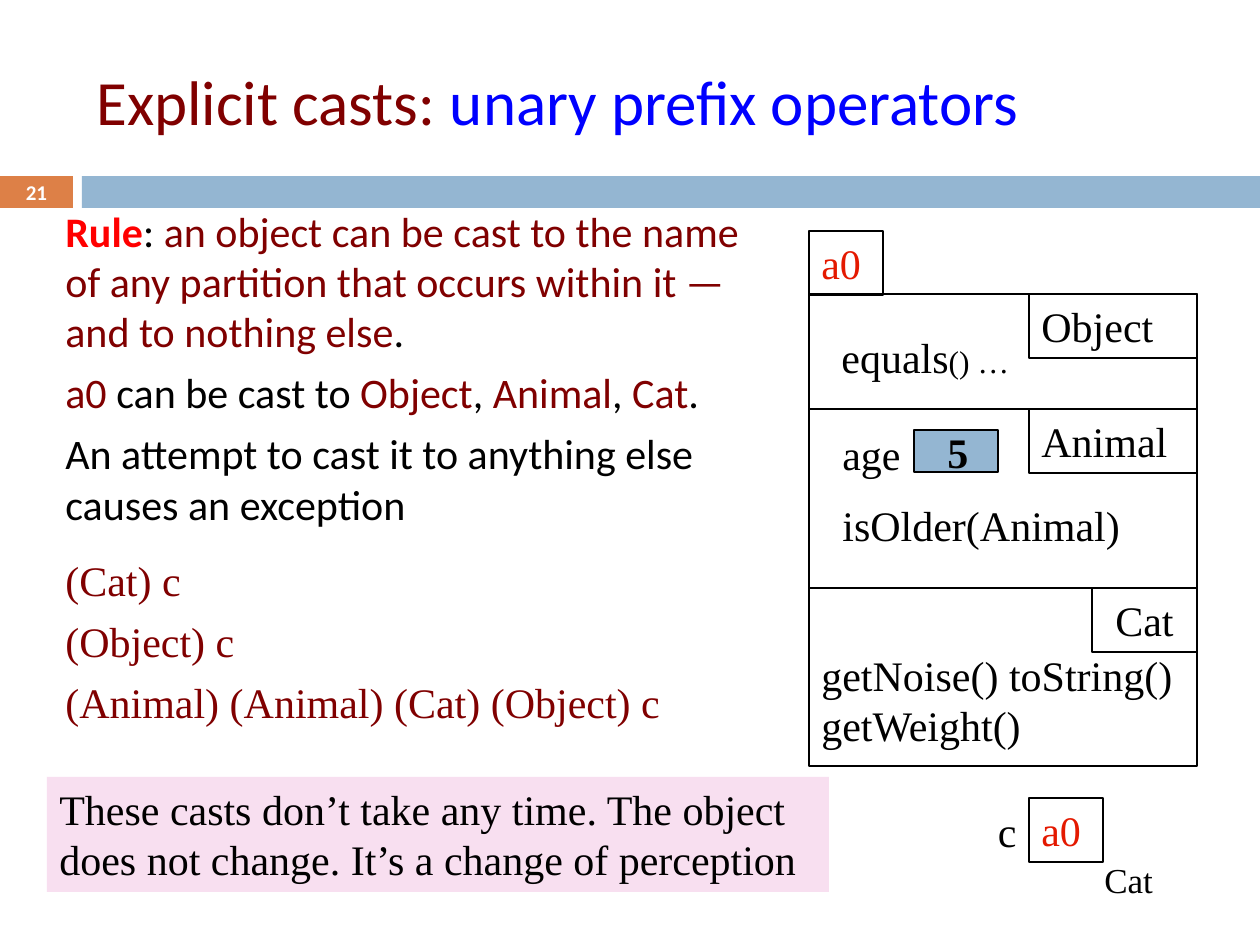
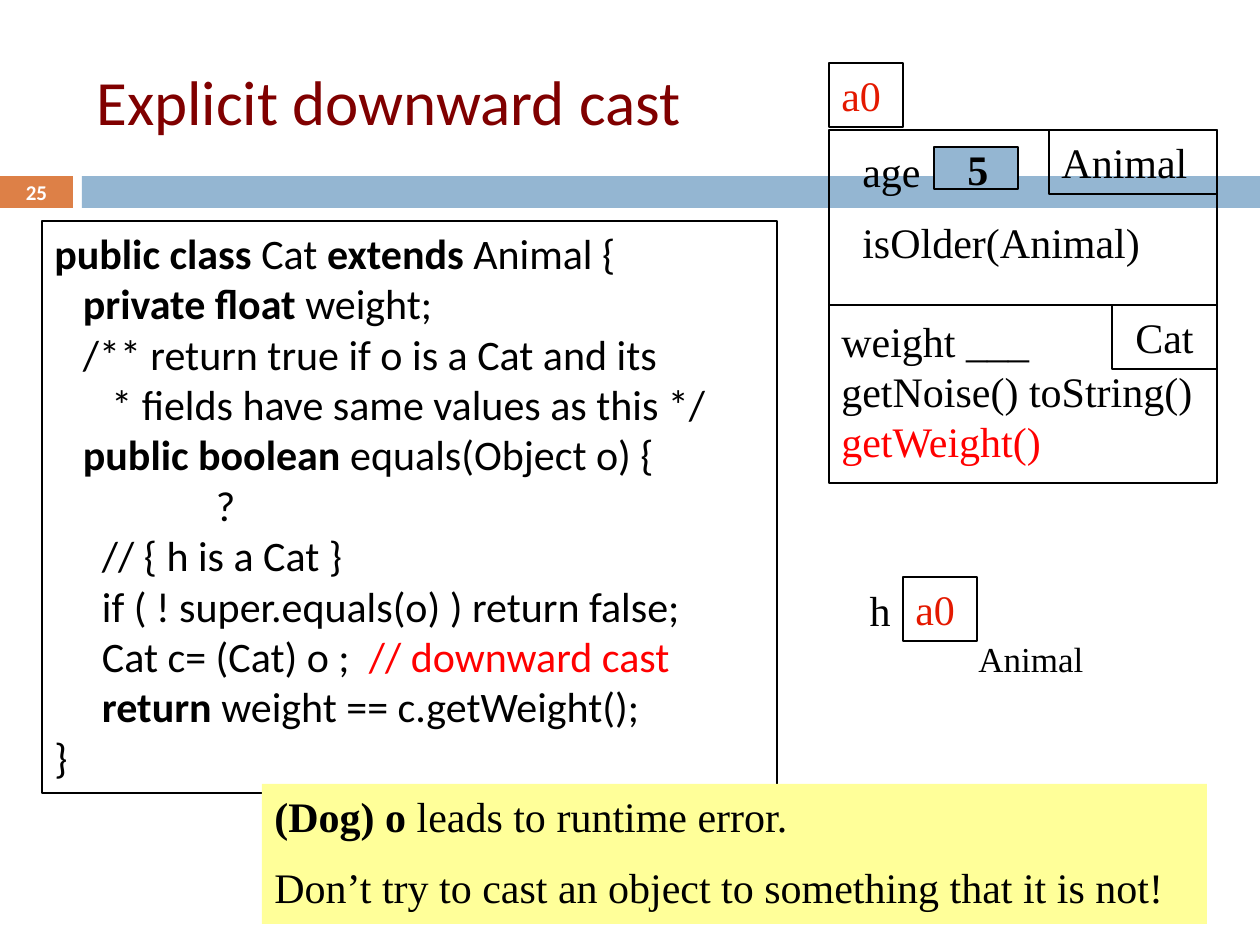
import itertools

import pptx
import pptx.dml.color
import pptx.enum.shapes
import pptx.enum.text
import pptx.oxml.xmlchemy
import pptx.util

RGBColor = pptx.dml.color.RGBColor
ALIGN = pptx.enum.text.PP_ALIGN
ANCHOR = pptx.enum.text.MSO_ANCHOR

# Scale and shared formats
PX_PER_INCH = 126
SLIDE_W, SLIDE_H = 1260, 945
SANS, SERIF = "Calibri", "Times New Roman"
SPACE_WIDTH = 9.5  # one 24 pt Calibri space

BLACK = RGBColor(0x00, 0x00, 0x00)
WHITE = RGBColor(0xFF, 0xFF, 0xFF)
MAROON = RGBColor(0x80, 0x00, 0x00)
BLUE = RGBColor(0x00, 0x00, 0xFF)
RED = RGBColor(0xFF, 0x00, 0x00)
POINTER_RED = RGBColor(0xE4, 0x19, 0x00)
ORANGE = RGBColor(0xDD, 0x80, 0x47)
STEEL = RGBColor(0x94, 0xB6, 0xD2)
PINK = RGBColor(0xF8, 0xDF, 0xF0)
YELLOW = RGBColor(0xFF, 0xFF, 0x99)

BOLD = {"bold": True}


def px(length):
    return pptx.util.Emu(round(length * 914400 / PX_PER_INCH))


def write_text(shape, paragraphs, size=24, font=SERIF, color=BLACK, bold=False,
               align=ALIGN.LEFT, anchor=ANCHOR.TOP, gap=0, wrap=True, indents=()):
    """Fill a shape; a paragraph is a string or a list of (text, format) runs."""
    frame = shape.text_frame
    frame.word_wrap = wrap
    frame.vertical_anchor = anchor
    for number, (runs, indent) in enumerate(
            itertools.zip_longest(paragraphs, indents, fillvalue=0)):
        paragraph = frame.add_paragraph() if number else frame.paragraphs[0]
        paragraph.alignment = align
        paragraph.space_before = pptx.util.Pt(gap if number else 0)
        if indent:
            paragraph._p.get_or_add_pPr().set("marL", str(px(indent)))
        for text, changes in [(runs, {})] if isinstance(runs, str) else runs:
            run = paragraph.add_run()
            run.text = text
            formats = {"name": font, "size": pptx.util.Pt(size),
                       "bold": bold, "color": color} | changes
            run.font.fill.solid()
            run.font.fill.fore_color.rgb = formats.pop("color")
            for attribute, value in formats.items():
                setattr(run.font, attribute, value)


def add_text(slide, at, paragraphs, **formats):
    write_text(slide.shapes.add_textbox(*map(px, at)), paragraphs, **formats)


def add_box(slide, at, paragraphs=(), fill=None, line=None, **formats):
    box = slide.shapes.add_shape(
        pptx.enum.shapes.MSO_SHAPE.RECTANGLE, *map(px, at))
    box.shadow.inherit = False
    if fill is None:
        box.fill.background()
    else:
        box.fill.solid()
        box.fill.fore_color.rgb = fill
    if line is None:
        box.line.fill.background()
    else:
        box.line.color.rgb = line
        box.line.width = pptx.util.Pt(0.75)
    write_text(box, paragraphs, **formats)


def add_divider(slide, left, right, y):
    divider = slide.shapes.add_connector(
        pptx.enum.shapes.MSO_CONNECTOR.STRAIGHT, px(left), px(y), px(right), px(y))
    divider.line.color.rgb = BLACK
    divider.line.width = pptx.util.Pt(0.75)
    divider._element.spPr.append(
        pptx.oxml.xmlchemy.OxmlElement("a:effectLst"))


def add_lecture_slide(deck, number, title):
    """Blank slide with the band, the page number and the title."""
    slide = deck.slides.add_slide(deck.slide_layouts[6])
    add_box(slide, (0, 176, 73, 32), fill=ORANGE)
    add_box(slide, (82, 176, 1178, 32), fill=STEEL)
    add_text(slide, (84, 32, 1124, 136), [title], size=36, font=SANS,
             color=MAROON, anchor=ANCHOR.MIDDLE)
    add_text(slide, (0, 175, 73, 34), [number], size=12, font=SANS, color=WHITE,
             bold=True, align=ALIGN.CENTER, anchor=ANCHOR.MIDDLE)
    return slide


def add_pointer(slide, left, top):
    add_box(slide, (left, top, 74, 64), ["a0"], line=BLACK, color=POINTER_RED)


def add_variable(slide, left, top, name, type_name):
    """A variable: its name, its pointer value and its type."""
    add_text(slide, (left - 53, top + 1, 53, 63), [name], align=ALIGN.RIGHT)
    add_pointer(slide, left, top)
    add_text(slide, (left + 63, top + 54, 136, 55), [type_name], size=20)


def add_partition_tab(slide, right, top, width, name, align=ALIGN.LEFT):
    add_box(slide, (right - width, top, width, 64), [name], line=BLACK, align=align)


def add_cat_object(slide, left, pointer_top, top, animal_top, methods, methods_top):
    """Object a0 with its Animal and Cat partitions."""
    width = 388
    right = left + width
    cat_top = animal_top + 179
    add_box(slide, (left, top, width, animal_top + 357 - top), line=BLACK)
    add_pointer(slide, left, pointer_top)

    # Animal partition
    add_partition_tab(slide, right, max(top, animal_top), 168, "Animal")
    add_text(slide, (left + 21, animal_top + 13, 368, 140),
             ["age", "isOlder(Animal)"], gap=12)
    add_box(slide, (left + 105, animal_top + 21, 84, 42), fill=STEEL, line=BLACK)
    add_text(slide, (left + 126, animal_top + 11, 42, 64), ["5"], bold=True)

    # Cat partition
    add_divider(slide, left, left + 304, cat_top)
    add_partition_tab(slide, right, cat_top, 105, "Cat", ALIGN.CENTER)
    add_text(slide, (left, methods_top, 378, 165), methods)


def build_cast_rule_slide(deck):
    slide = add_lecture_slide(deck, "21", [
        ("Explicit casts: ", {}), ("unary prefix operators", {"color": BLUE})])
    maroon = {"color": MAROON}

    # Object with an extra Object partition on top
    left, top, animal_top = 809, 294, 409
    add_cat_object(slide, left, 231, top, animal_top,
                   ["getNoise() toString()", "getWeight()"], 643)
    add_divider(slide, left, left + 388, animal_top)
    add_partition_tab(slide, left + 388, top, 168, "Object")
    add_text(slide, (829, 325, 193, 63), [
        [("equals", {}), ("() …", {"size": pptx.util.Pt(18)})]], wrap=False)
    add_variable(slide, 1029, 798, "c", "Cat")

    # Rule and examples
    add_text(slide, (53, 199, 725, 339), [
        [("Rule", {"color": RED, "bold": True}), (": ", {}),
         ("an object can be cast to the name of any partition that occurs "
          "within it —and to nothing else", maroon), (".", {})],
        [("a0", maroon), (" can be cast to ", {}), ("Object", maroon), (", ", {}),
         ("Animal", maroon), (", ", {}), ("Cat", maroon), (".", {})],
        "An attempt to cast it to anything else causes an exception",
    ], font=SANS, gap=6)
    add_text(slide, (53, 548, 626, 186), [
        "(Cat) c", "(Object) c", "(Animal) (Animal) (Cat) (Object) c",
    ], color=MAROON, gap=6, wrap=False)
    add_box(slide, (47, 777, 782, 115), [
        "These casts don’t take any time. The object does not change. "
        "It’s a change of perception"], fill=PINK)


def build_downward_cast_slide(deck):
    slide = add_lecture_slide(deck, "25", "Explicit downward cast")
    add_variable(slide, 903, 577, "h", "Animal")

    # Code, each line with its indent in spaces
    code = [
        (0, [("public class", BOLD), (" Cat ", {}), ("extends", BOLD),
             (" Animal {", {})]),
        (3, [("private float ", BOLD), ("weight;", {})]),
        (3, "/** return true if o is a Cat and its"),
        (6, "* fields have same values as this */"),
        (3, [("public boolean ", BOLD), ("equals(Object o) {", {})]),
        (17, "?"),
        (5, "// { h is a Cat }"),
        (5, "if ( ! super.equals(o) ) return false;"),
        (5, [("Cat c= (Cat) o ;  ", {}), ("// downward cast", {"color": RED})]),
        (5, [("return", BOLD), (" weight == c.getWeight();", {})]),
        (0, "}"),
    ]
    add_box(slide, (42, 221, 735, 572), [runs for _, runs in code], line=BLACK,
            font=SANS, indents=[spaces * SPACE_WIDTH for spaces, _ in code])

    # Object and warning
    add_cat_object(slide, 829, 63, 130, 126, [
        "weight ___ getNoise() toString()",
        [("getWeight()", {"color": RED})]], 309)
    add_box(slide, (262, 784, 945, 140), [
        [("(Dog) o", BOLD), (" leads to runtime error.", {})],
        "Don’t try to cast an object to something that it is not!",
    ], fill=YELLOW, gap=12)


def main():
    deck = pptx.Presentation()
    deck.slide_width, deck.slide_height = px(SLIDE_W), px(SLIDE_H)
    build_cast_rule_slide(deck)
    build_downward_cast_slide(deck)
    deck.save("out.pptx")


if __name__ == "__main__":
    main()
